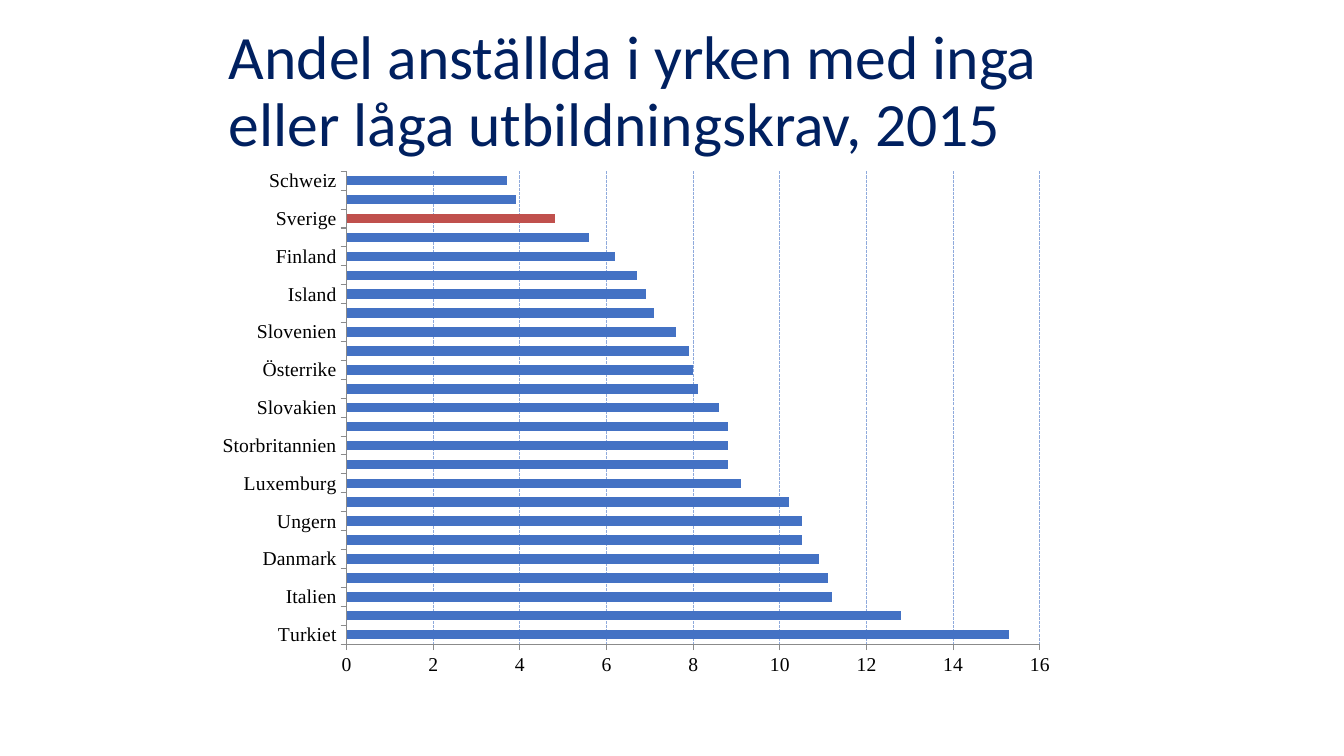
from lxml import etree
from pptx import Presentation
from pptx import util as u
from pptx.chart.data import CategoryChartData
from pptx.dml.color import RGBColor
from pptx.enum import chart as ch, dml, text
from pptx.oxml.ns import qn

PX = 9144  # EMU per px, 100 px to the inch

NAVY = RGBColor(0x00, 0x20, 0x60)
BLACK = RGBColor(0, 0, 0)
BAR_BLUE = RGBColor(0x44, 0x72, 0xC4)
SWEDEN_RED = RGBColor(0xC0, 0x50, 0x4D)
GRID_BLUE = RGBColor(0x8F, 0xAA, 0xDC)
AXIS_GREY = RGBColor(0x8B, 0x8B, 0x8B)

# Listed from the bottom bar upwards; every second bar carries a name
COUNTRIES = ["Turkiet", "Italien", "Danmark", "Ungern", "Luxemburg",
             "Storbritannien", "Slovakien", "Österrike", "Slovenien",
             "Island", "Finland", "Sverige", "Schweiz"]
SHARES = [15.3, 12.8, 11.2, 11.1, 10.9, 10.5, 10.5, 10.2, 9.1, 8.8, 8.8, 8.8,
          8.6, 8.1, 8.0, 7.9, 7.6, 7.1, 6.9, 6.7, 6.2, 5.6, 4.8, 3.9, 3.7]


class SlideBuilder:
    """Holds the slide and its style."""

    title_font, title_size = "Calibri", u.Pt(44)
    chart_font, chart_size = "Times New Roman", u.Pt(14)

    def __init__(self, slide):
        self.slide = slide

    def title(self, wording, *box):
        frame = self.slide.shapes.add_textbox(*(v * PX for v in box)).text_frame
        frame.word_wrap = True
        frame.vertical_anchor = text.MSO_ANCHOR.MIDDLE
        heading = frame.paragraphs[0]
        heading.text = wording
        heading.line_spacing = 0.9
        heading.font.name = self.title_font
        heading.font.size = self.title_size
        heading.font.color.rgb = NAVY

    def bar_chart(self, labels, values, highlight, plot, *box):
        data = CategoryChartData(number_format="0.0")
        data.categories = labels
        data.add_series("Series 1", values)
        chart = self.slide.shapes.add_chart(
            ch.XL_CHART_TYPE.BAR_STACKED, *(v * PX for v in box), data).chart
        chart.has_title = chart.has_legend = False
        chart.font.name = self.chart_font
        chart.font.size = self.chart_size
        chart.font.color.rgb = BLACK

        # Bars
        bars = chart.plots[0]
        bars.gap_width = bars.overlap = 100
        bars.vary_by_categories = False
        share = bars.series[0]
        share.format.fill.solid()
        share.format.fill.fore_color.rgb = BAR_BLUE
        marked = share.points[labels.index(highlight)].format.fill
        marked.solid()
        marked.fore_color.rgb = SWEDEN_RED

        self.axes(chart.category_axis, chart.value_axis)
        self.plot_layout(chart, plot)

    def axes(self, countries, percent):
        for axis in (countries, percent):
            axis.major_tick_mark = ch.XL_TICK_MARK.OUTSIDE
            axis.minor_tick_mark = ch.XL_TICK_MARK.NONE
            axis.format.line.color.rgb = AXIS_GREY
            axis.format.line.width = u.Pt(0.75)
        countries.tick_label_position = ch.XL_TICK_LABEL_POSITION.LOW
        percent.minimum_scale, percent.maximum_scale = 0, 16
        percent.major_unit = 2
        percent.tick_labels.number_format = "0"
        percent.tick_labels.number_format_is_linked = False
        percent.has_major_gridlines = True
        grid = percent.major_gridlines.format.line
        grid.color.rgb = GRID_BLUE
        grid.width = u.Pt(0.75)
        grid.dash_style = dml.MSO_LINE.SQUARE_DOT

    def plot_layout(self, chart, plot):
        """Fix the inner plot area, given as px within the chart."""
        area = chart.element.find(".//" + qn("c:plotArea"))
        for old in area.findall(qn("c:layout")):
            area.remove(old)
        layout = etree.Element(qn("c:layout"))
        area.insert(0, layout)
        manual = etree.SubElement(layout, qn("c:manualLayout"))
        settings = [("layoutTarget", "inner"), ("xMode", "edge"),
                    ("yMode", "edge"), *zip("xywh", plot)]
        for tag, value in settings:
            etree.SubElement(manual, qn("c:" + tag)).set("val", str(value))


def main():
    deck = Presentation()
    deck.slide_width, deck.slide_height = 1333 * PX, 750 * PX
    builder = SlideBuilder(deck.slides.add_slide(deck.slide_layouts[6]))

    # Heading
    builder.title("Andel anställda i yrken med inga eller låga utbildningskrav, 2015",
                  217, 30, 899, 125)

    # Share of employees by country, plot area in fractions of the chart
    labels = [""] * len(SHARES)
    labels[::2] = COUNTRIES
    chart_box = 194, 139, 866, 543
    plot_box = 150, 31, 688, 469
    plot = [round(part / chart_box[2 + i % 2], 3)
            for i, part in enumerate(plot_box)]
    builder.bar_chart(labels, SHARES, "Sverige", plot, *chart_box)
    deck.save("out.pptx")


if __name__ == "__main__":
    main()
